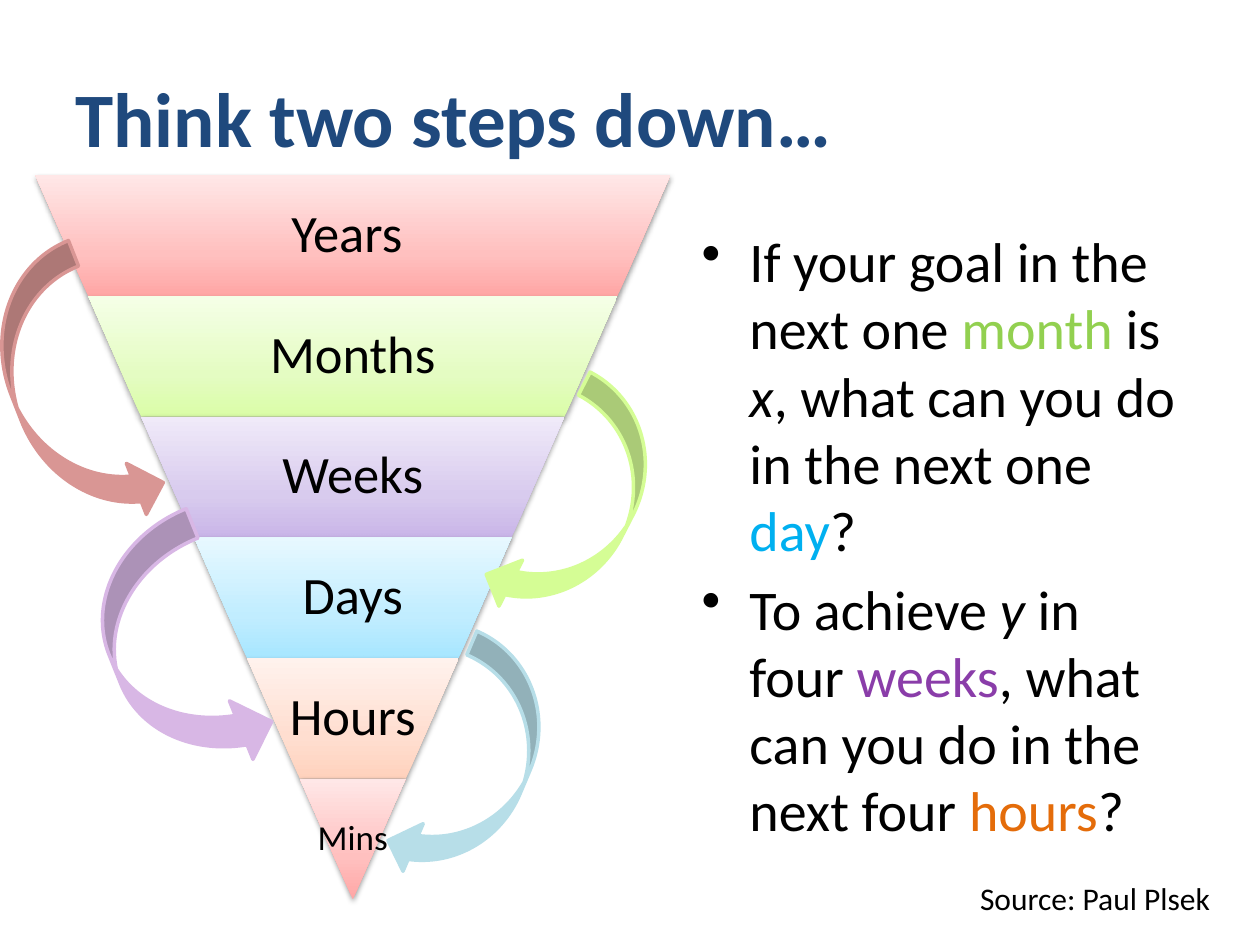
from dataclasses import dataclass

from lxml.etree import SubElement
from pptx import Presentation
from pptx.dml.color import RGBColor
from pptx.enum.shapes import MSO_SHAPE
from pptx.enum.text import MSO_ANCHOR, MSO_AUTO_SIZE, PP_ALIGN
from pptx.oxml import parse_xml
from pptx.oxml.ns import nsdecls, qn
from pptx.util import Inches, Pt

FONT = "Calibri"
COLORS = {
    "title": "1F497D", "text": "000000",
    "month": "92D050", "day": "00B0F0", "weeks": "8A3DA9", "hours": "E46C0A",
    "red_arrow": "D99694", "green_arrow": "D5FD95",
    "purple_arrow": "D8B7E5", "blue_arrow": "B7DEE8",
}
RED_SHADES = ("FFA6A5", "FFC0BF", "FFE7E7")
FUNNEL_LEFT, FUNNEL_TOP, FUNNEL_WIDTH = 0.28, 1.39, 5.04
TIER_HEIGHT, TIER_INSET = 0.958, 0.42


@dataclass
class Tier:
    label: str
    shades: tuple[str, str, str]
    size: int = 30
    text_share: float = 0.65
    slope: float = 0.438
    margin: float = 0.04


@dataclass
class Arrow:
    left: float
    top: float
    width: float
    height: float
    rotation: float
    color: str
    flipped: bool = False


@dataclass
class Span:
    text: str
    color: str = "text"
    italic: bool = False


TIERS = [
    Tier("Years ", RED_SHADES),
    Tier("Months", ("DAFDA7", "E4FCC2", "F5FFE7")),
    Tier("Weeks", ("C9B5E8", "D8CBEE", "F0EAF9")),
    Tier("Days", ("A7E6FF", "C1EDFF", "E7F8FF")),
    Tier("Hours ", ("FFD2BD", "FFDED0", "FFF2ED")),
    Tier("Mins", RED_SHADES, size=20, text_share=1, slope=0.5, margin=0.03),
]
ARROWS = [
    Arrow(0.12, 1.99, 0.87, 2.28, 338.6, "red_arrow"),
    Arrow(4.18, 3.03, 0.82, 2.01, 27.2, "green_arrow", flipped=True),
    Arrow(0.9, 4.15, 1, 2.07, 338.1, "purple_arrow"),
    Arrow(3.36, 5.09, 0.82, 2.01, 23, "blue_arrow", flipped=True),
]
QUESTIONS = [
    [Span("If your goal in the next one "), Span("month", "month"), Span(" is "),
     Span("x", italic=True), Span(", what can you do in the next one "),
     Span("day", "day"), Span("?")],
    [Span("To achieve "), Span("y", italic=True), Span(" in four "),
     Span("weeks", "weeks"), Span(", what can you do in the next four "),
     Span("hours", "hours"), Span("?")],
]


def rgb(name: str) -> RGBColor:
    return RGBColor.from_string(COLORS[name])


def style(para, size: int, color: str = "text") -> None:
    para.font.name = FONT
    para.font.size = Pt(size)
    para.font.color.rgb = rgb(color)


def add_box(page, left: float, top: float, width: float, height: float):
    return page.shapes.add_textbox(
        Inches(left), Inches(top), Inches(width), Inches(height))


def shade(shape, shades: tuple[str, str, str]) -> None:
    stops = "".join(
        f'<a:gs pos="{position}"><a:srgbClr val="{color}"/></a:gs>'
        for position, color in zip((0, 35000, 100000), shades))
    gradient = parse_xml(
        f'<a:gradFill {nsdecls("a")} rotWithShape="0"><a:gsLst>{stops}</a:gsLst>'
        '<a:lin ang="16200000" scaled="1"/></a:gradFill>')
    shadow = parse_xml(
        f'<a:effectLst {nsdecls("a")}><a:outerShdw blurRad="40000" dist="20000" '
        'dir="5400000" rotWithShape="0"><a:srgbClr val="000000">'
        '<a:alpha val="38000"/></a:srgbClr></a:outerShdw></a:effectLst>')
    shape.line.fill.background()
    properties = shape.fill._xPr
    properties.find(qn("a:prstGeom")).addnext(gradient)
    properties.append(shadow)


def draw_tier(page, tier: Tier, index: int) -> None:
    left = FUNNEL_LEFT + index * TIER_INSET
    top = FUNNEL_TOP + index * TIER_HEIGHT
    width = FUNNEL_WIDTH - 2 * index * TIER_INSET
    band = page.shapes.add_shape(
        MSO_SHAPE.TRAPEZOID, Inches(left), Inches(top), Inches(width), Inches(TIER_HEIGHT))
    band.rotation = 180
    band.adjustments[0] = tier.slope
    shade(band, tier.shades)

    text_width = width * tier.text_share
    box = add_box(page, left + (width - text_width) / 2, top, text_width, TIER_HEIGHT)
    frame = box.text_frame
    frame.word_wrap = True
    frame.vertical_anchor = MSO_ANCHOR.MIDDLE
    frame.margin_left = frame.margin_right = Inches(tier.margin)
    frame.margin_top = frame.margin_bottom = Inches(tier.margin)
    para = frame.paragraphs[0]
    para.text = tier.label
    para.alignment = PP_ALIGN.CENTER
    para.line_spacing = 0.9
    para.space_after = Pt(tier.size * 0.35)
    style(para, tier.size)


def draw_arrow(page, arrow: Arrow) -> None:
    shape = page.shapes.add_shape(
        MSO_SHAPE.CURVED_RIGHT_ARROW, Inches(arrow.left), Inches(arrow.top),
        Inches(arrow.width), Inches(arrow.height))
    shape.rotation = arrow.rotation
    shape.shadow.inherit = False
    shape.fill.solid()
    shape.fill.fore_color.rgb = rgb(arrow.color)
    shape.line.color.rgb = rgb(arrow.color)
    shape.line.width = Pt(2)
    if arrow.flipped:
        shape.element.spPr.find(qn("a:xfrm")).set("flipH", "1")


def draw_questions(page) -> None:
    frame = add_box(page, 5.47, 1.75, 4.03, 4.95).text_frame
    frame.word_wrap = True
    for index, spans in enumerate(QUESTIONS):
        para = frame.add_paragraph() if index else frame.paragraphs[0]
        para.space_before = Pt(6.4)
        style(para, 32)
        properties = para._p.get_or_add_pPr()
        properties.set("marL", str(Inches(0.38)))
        properties.set("indent", str(Inches(-0.38)))
        bullet = SubElement(properties, qn("a:buChar"), char="•")
        properties.find(qn("a:defRPr")).addprevious(bullet)
        for span in spans:
            run = para.add_run()
            run.text = span.text
            run.font.color.rgb = rgb(span.color)
            run.font.italic = span.italic


def main() -> None:
    """Build the time-horizon funnel slide."""
    deck = Presentation()
    deck.slide_width, deck.slide_height = Inches(10), Inches(7.5)
    page = deck.slides.add_slide(deck.slide_layouts[5])

    title = page.shapes.title
    title.left, title.top = Inches(0.5), Inches(0.3)
    title.width, title.height = Inches(9), Inches(1.25)
    title.text_frame.vertical_anchor = MSO_ANCHOR.MIDDLE
    heading = title.text_frame.paragraphs[0]
    heading.text = "Think two steps down…"
    heading.alignment = PP_ALIGN.LEFT
    style(heading, 44, "title")
    heading.font.bold = True

    draw_questions(page)
    for index, tier in enumerate(TIERS):
        draw_tier(page, tier, index)
    for arrow in ARROWS:
        draw_arrow(page, arrow)

    source = add_box(page, 7.68, 6.93, 2.05, 0.4).text_frame
    source.word_wrap = False
    source.auto_size = MSO_AUTO_SIZE.SHAPE_TO_FIT_TEXT
    source.text = "Source: Paul Plsek"
    style(source.paragraphs[0], 18)

    deck.save("out.pptx")


if __name__ == "__main__":
    main()
